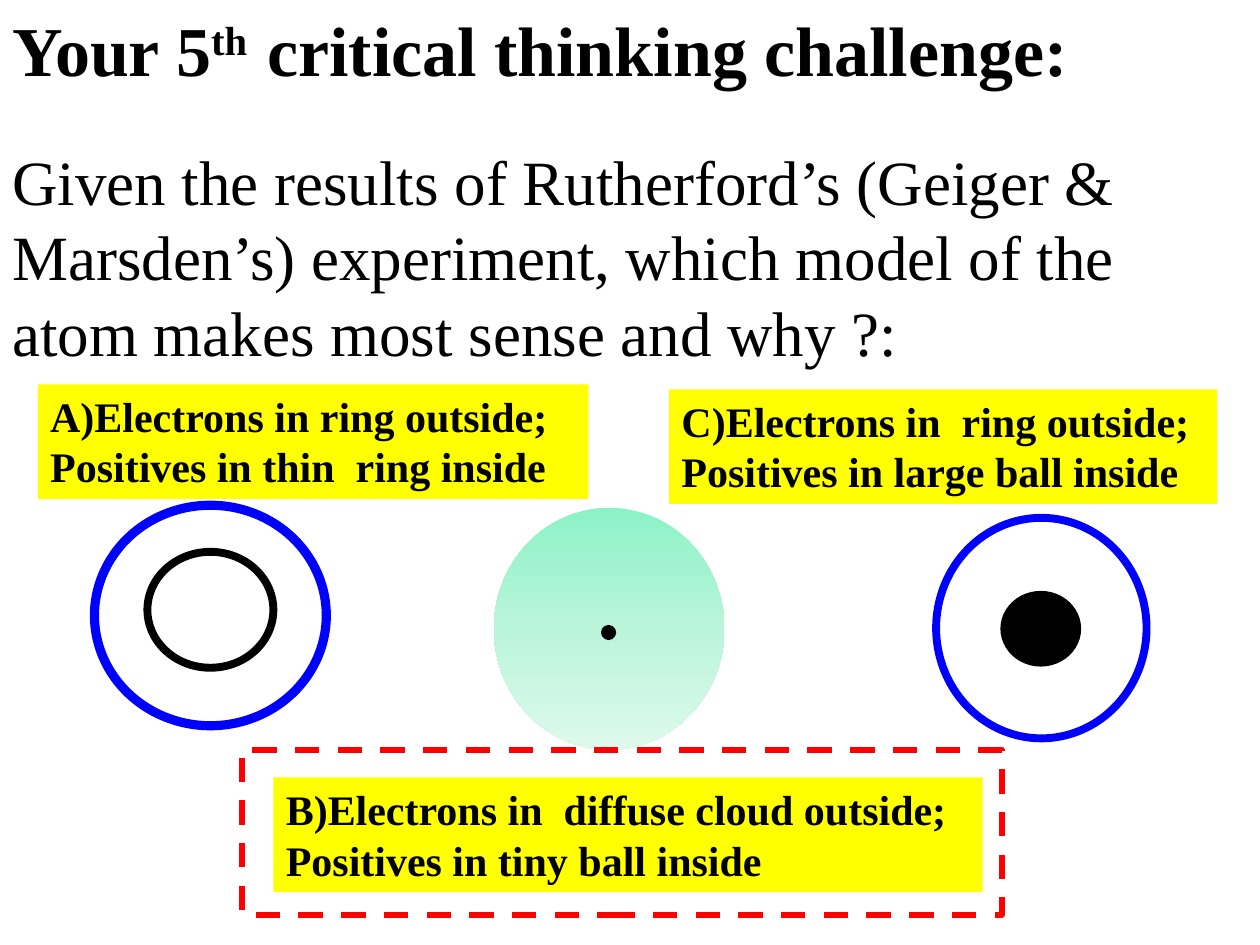
from copy import deepcopy
from dataclasses import dataclass
from typing import Optional

from pptx import Presentation
from pptx.dml.color import RGBColor
from pptx.enum.dml import MSO_LINE
from pptx.enum.shapes import MSO_SHAPE
from pptx.enum.text import MSO_ANCHOR, PP_ALIGN
from pptx.util import Inches, Pt

OVAL = MSO_SHAPE.OVAL
RECTANGLE = MSO_SHAPE.RECTANGLE
DASH = MSO_LINE.DASH
TOP = MSO_ANCHOR.TOP
LEFT = PP_ALIGN.LEFT


@dataclass(frozen=True)
class Theme:
    font: str = "Times New Roman"
    title_size: float = 40
    question_size: float = 36
    caption_size: float = 24
    black: str = "000000"
    electron: str = "0000FF"
    caption_fill: str = "FFFF00"
    answer: str = "FF0000"
    cloud: tuple[str, ...] = ("8CF2C6", "BAF5DA", "DEF9EC")


THEME = Theme()


@dataclass(frozen=True)
class Box:
    left: float
    top: float
    width: float
    height: float

    def lengths(self) -> tuple[int, ...]:
        return tuple(Inches(n) for n in (self.left, self.top, self.width, self.height))


@dataclass(frozen=True)
class Figure:
    box: Box
    fill: Optional[str] = None
    line: Optional[str] = None
    line_width: float = 0


@dataclass(frozen=True)
class Caption:
    box: Box
    lines: tuple[str, str]


CLOUD = Box(3.92, 4.03, 1.83, 1.92)
ATOM_PARTS = (
    Figure(Box(4.77, 4.96, 0.12, 0.12), fill=THEME.black),
    Figure(Box(7.43, 4.11, 1.67, 1.75), line=THEME.electron, line_width=4.5),
    Figure(Box(7.95, 4.7, 0.62, 0.58), THEME.black, THEME.black, 1.5),
    Figure(Box(1.17, 4.38, 1, 0.92), line=THEME.black, line_width=4.5),
    Figure(Box(0.75, 4.01, 1.84, 1.75), line=THEME.electron, line_width=5.25),
)
CAPTIONS = (
    Caption(Box(0.3, 3.05, 4.37, 0.91),
            ("A)Electrons in ring outside;", "Positives in thin  ring inside")),
    Caption(Box(2.17, 6.17, 5.63, 0.91),
            ("B)Electrons in  diffuse cloud outside;", "Positives in tiny ball inside")),
    Caption(Box(5.31, 3.09, 4.35, 0.91),
            ("C)Electrons in  ring outside;", "Positives in large ball inside")),
)
ANSWER_FRAME = Figure(Box(1.92, 5.95, 6.03, 1.31), line=THEME.answer, line_width=3.5)
TITLE_RUNS = (("Your 5", False), ("th  ", True), ("critical thinking challenge:", False))
QUESTION = ("Given the results of Rutherford’s (Geiger & Marsden’s) experiment, "
            "which model of the atom makes most sense and why ?:")


def style_paragraph(paragraph, size: float, bold: bool) -> None:
    paragraph.alignment = LEFT
    font = paragraph.font
    font.name = THEME.font
    font.size = Pt(size)
    font.bold = bold
    font.color.rgb = RGBColor.from_string(THEME.black)


def add_figure(slide, figure: Figure, preset=OVAL):
    shape = slide.shapes.add_shape(preset, *figure.box.lengths())
    shape.shadow.inherit = False
    if figure.fill:
        shape.fill.solid()
        shape.fill.fore_color.rgb = RGBColor.from_string(figure.fill)
    else:
        shape.fill.background()
    if figure.line:
        shape.line.color.rgb = RGBColor.from_string(figure.line)
        shape.line.width = Pt(figure.line_width)
    else:
        shape.line.fill.background()
    return shape


def add_cloud(slide) -> None:
    fill = add_figure(slide, Figure(CLOUD)).fill
    fill.gradient()
    fill.gradient_angle = 270
    first_stop = fill._fill._gradFill.gsLst[0]
    first_stop.addnext(deepcopy(first_stop))
    for index, (stop, color) in enumerate(zip(fill.gradient_stops, THEME.cloud)):
        stop.position = index / 2
        stop.color.rgb = RGBColor.from_string(color)


def add_caption(slide, caption: Caption) -> None:
    shape = add_figure(slide, Figure(caption.box, fill=THEME.caption_fill), RECTANGLE)
    frame = shape.text_frame
    frame.vertical_anchor = TOP
    frame.text = "\n".join(caption.lines)
    for paragraph in frame.paragraphs:
        style_paragraph(paragraph, THEME.caption_size, True)


def add_title(slide) -> None:
    frame = slide.shapes.add_textbox(*Box(0, 0, 8.83, 1.45).lengths()).text_frame
    frame.word_wrap = False
    paragraph = frame.paragraphs[0]
    style_paragraph(paragraph, THEME.title_size, True)
    for text, raised in TITLE_RUNS:
        run = paragraph.add_run()
        run.text = text
        if raised:
            run.font._element.set("baseline", "30000")


def add_question(slide) -> None:
    frame = slide.shapes.add_textbox(*Box(0, 1.08, 9.67, 1.92).lengths()).text_frame
    frame.word_wrap = True
    frame.text = QUESTION
    style_paragraph(frame.paragraphs[0], THEME.question_size, False)


def main() -> None:
    presentation = Presentation()
    presentation.slide_width = Inches(10)
    presentation.slide_height = Inches(7.5)
    slide = presentation.slides.add_slide(presentation.slide_layouts[6])
    add_title(slide)
    add_question(slide)
    add_cloud(slide)
    for figure in ATOM_PARTS:
        add_figure(slide, figure)
    for caption in CAPTIONS:
        add_caption(slide, caption)
    add_figure(slide, ANSWER_FRAME, RECTANGLE).line.dash_style = DASH
    presentation.save("out.pptx")


if __name__ == "__main__":
    main()
